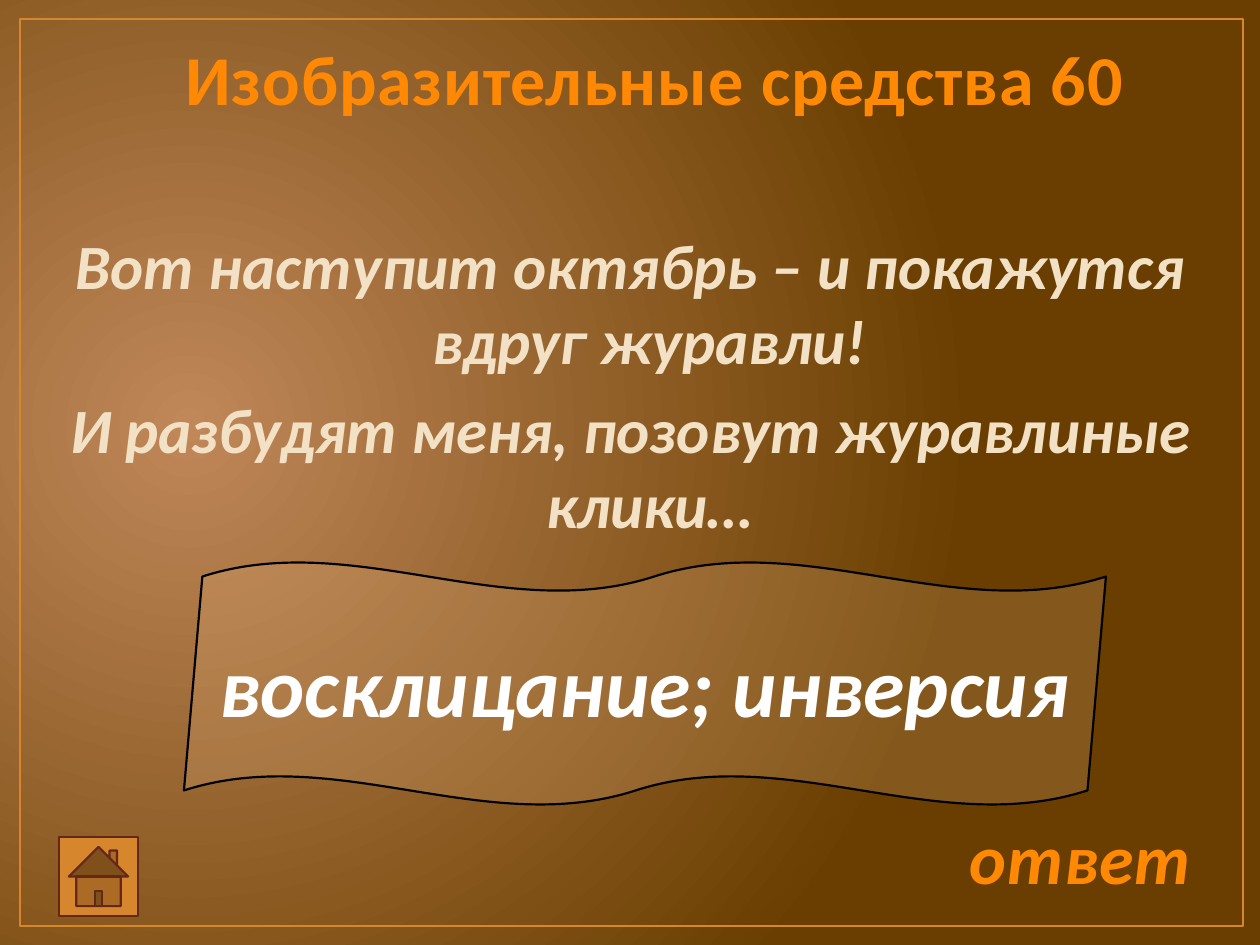
from dataclasses import dataclass

from lxml import etree
from pptx import Presentation
from pptx.dml.color import RGBColor
from pptx.enum.shapes import MSO_SHAPE
from pptx.enum.text import MSO_ANCHOR, MSO_AUTO_SIZE, PP_ALIGN
from pptx.oxml.ns import qn
from pptx.util import Emu, Pt

EMU_PER_PX = 914400 / 126
FONT = "Calibri"
CENTER = PP_ALIGN.CENTER
TOP, MIDDLE = MSO_ANCHOR.TOP, MSO_ANCHOR.MIDDLE
FIXED, GROW = MSO_AUTO_SIZE.NONE, MSO_AUTO_SIZE.SHAPE_TO_FIT_TEXT
RECTANGLE = MSO_SHAPE.RECTANGLE
HOME_BUTTON = MSO_SHAPE.ACTION_BUTTON_HOME
DOUBLE_WAVE = MSO_SHAPE.DOUBLE_WAVE

COPPER = RGBColor(0xC0, 0x87, 0x59)
DARK_BROWN = RGBColor(0x69, 0x3E, 0x00)
AMBER = RGBColor(0xD6, 0x86, 0x2D)
RUST = RGBColor(0x64, 0x28, 0x1B)
ORANGE = RGBColor(0xFF, 0x88, 0x04)
DARK_ORANGE = RGBColor(0xB7, 0x60, 0x00)
CREAM = RGBColor(0xF3, 0xE1, 0xC6)
SAND = RGBColor(0xE6, 0xB6, 0x81)
BLACK = RGBColor(0x00, 0x00, 0x00)
WHITE = RGBColor(0xFF, 0xFF, 0xFF)


@dataclass(frozen=True)
class Box:
    left: int
    top: int
    width: int
    height: int

    def emu(self) -> list[Emu]:
        return [px(n) for n in (self.left, self.top, self.width, self.height)]


@dataclass(frozen=True)
class TextStyle:
    size: int
    color: RGBColor
    italic: bool = True
    gradient_end: RGBColor | None = None


HEADING = TextStyle(40, ORANGE, False, DARK_ORANGE)
QUOTE = TextStyle(36, CREAM)
PROMPT = TextStyle(40, ORANGE, True, DARK_ORANGE)
ANSWER = TextStyle(48, WHITE)


def px(length: int) -> Emu:
    return Emu(round(length * EMU_PER_PX))


def place(shape, box: Box) -> None:
    shape.left, shape.top, shape.width, shape.height = box.emu()


def set_gradient(fill, stops: list[tuple[float, RGBColor]]) -> None:
    fill.gradient()
    for stop, (position, color) in zip(fill.gradient_stops, stops):
        stop.position = position
        stop.color.rgb = color


def paint_background(slide) -> None:
    set_gradient(slide.background.fill, [(0, COPPER), (1, DARK_BROWN)])
    gradient = next(slide.element.iter(qn("a:gradFill")))
    gradient.remove(gradient.find(qn("a:lin")))
    circle = etree.SubElement(gradient, qn("a:path"))
    circle.set("path", "circle")
    focus = etree.SubElement(circle, qn("a:fillToRect"))
    for side, percent in zip("ltrb", (15, 50, 85, 60)):
        focus.set(side, str(percent * 1000))


def add_text(paragraph, text: str, style: TextStyle) -> None:
    paragraph.alignment = CENTER
    run = paragraph.add_run()
    run.text = text
    font = run.font
    font.name, font.size = FONT, Pt(style.size)
    font.bold, font.italic = True, style.italic
    if style.gradient_end is None:
        font.color.rgb = style.color
        return
    set_gradient(font.fill, [(0.25, style.color), (1, style.gradient_end)])
    font.fill.gradient_angle = 270
    run.font._element.set("spc", "50")


def fit_frame(frame, anchor, auto_size, wrap: bool = True) -> None:
    frame.word_wrap = wrap
    frame.auto_size = auto_size
    frame.vertical_anchor = anchor


def add_outlined(slide, preset, box: Box, line: RGBColor, width: float,
                 fill: RGBColor | None = None):
    shape = slide.shapes.add_shape(preset, *box.emu())
    shape.shadow.inherit = False
    shape.line.color.rgb = line
    shape.line.width = Pt(width)
    if fill is None:
        shape.fill.background()
    else:
        shape.fill.solid()
        shape.fill.fore_color.rgb = fill
    return shape


def set_opacity(shape, percent: int) -> None:
    color = shape.fill._xPr.find(qn("a:solidFill"))[0]
    etree.SubElement(color, qn("a:alpha")).set("val", str(percent * 1000))


def add_quote(body, lines: list[str]) -> None:
    fit_frame(body.text_frame, TOP, FIXED)
    for index, line in enumerate(lines):
        frame = body.text_frame
        paragraph = frame.add_paragraph() if index else frame.paragraphs[0]
        add_text(paragraph, line, QUOTE)
        properties = paragraph._p.get_or_add_pPr()
        properties.set("marL", str(px(38)))
        properties.set("indent", str(-px(38)))
        spacing = etree.SubElement(properties, qn("a:spcBef"))
        etree.SubElement(spacing, qn("a:spcPct")).set("val", "20000")
        etree.SubElement(properties, qn("a:buNone"))


def main() -> None:
    presentation = Presentation()
    presentation.slide_width, presentation.slide_height = px(1260), px(945)
    slide = presentation.slides.add_slide(presentation.slide_layouts[1])
    paint_background(slide)

    border = add_outlined(slide, RECTANGLE, Box(20, 19, 1223, 907), AMBER, 1.5)
    slide.shapes._spTree.insert(2, border._element)

    title, body = slide.placeholders
    place(title, Box(168, 29, 974, 97))
    fit_frame(title.text_frame, TOP, GROW)
    add_text(title.text_frame.paragraphs[0], "Изобразительные средства 60", HEADING)

    add_outlined(slide, HOME_BUTTON, Box(59, 837, 79, 79), RUST, 1.25, AMBER)

    place(body, Box(35, 220, 1191, 624))
    add_quote(body, [
        "Вот наступит октябрь – и покажутся вдруг журавли!",
        "И разбудят меня, позовут журавлиные клики…",
    ])

    prompt = slide.shapes.add_textbox(*Box(955, 808, 251, 97).emu())
    fit_frame(prompt.text_frame, TOP, GROW, wrap=False)
    add_text(prompt.text_frame.paragraphs[0], "ответ", PROMPT)

    wave = add_outlined(slide, DOUBLE_WAVE, Box(184, 562, 922, 243), BLACK, 1.25, SAND)
    wave.adjustments[0], wave.adjustments[1] = 0.06, -0.01
    set_opacity(wave, 22)
    fit_frame(wave.text_frame, MIDDLE, FIXED)
    add_text(wave.text_frame.paragraphs[0], "восклицание; инверсия", ANSWER)

    presentation.save("out.pptx")


if __name__ == "__main__":
    main()
